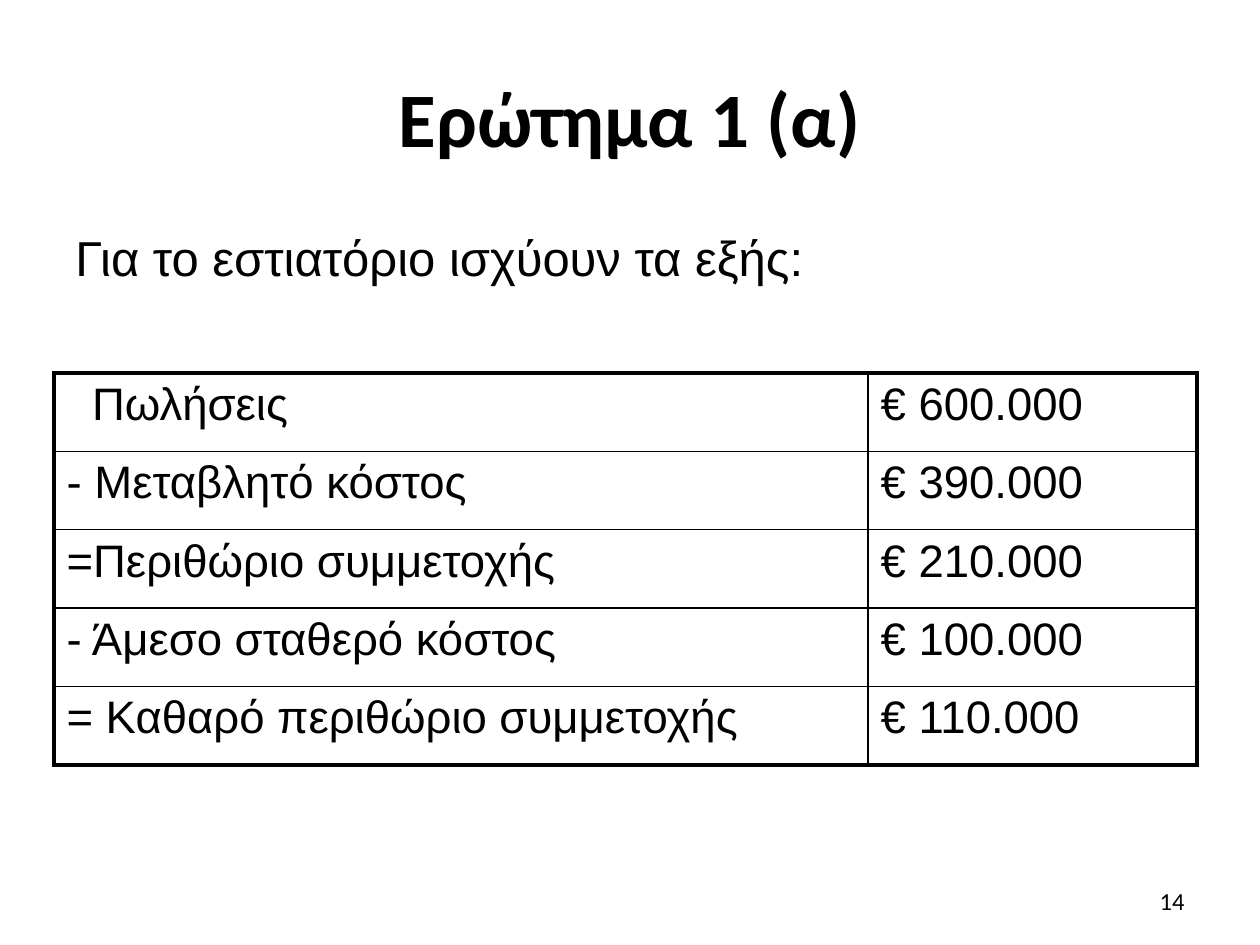
from lxml.etree import SubElement
from pptx import Presentation
from pptx.dml.color import RGBColor
from pptx.enum.text import MSO_ANCHOR, PP_ALIGN
from pptx.oxml.ns import qn
from pptx.util import Emu, Pt

PIXELS_PER_INCH = 126
BLACK = "000000"
THIN, THICK = 1, 2.25
ROWS = [
    ("Πωλήσεις", "€ 600.000"),
    ("- Μεταβλητό κόστος", "€ 390.000"),
    ("=Περιθώριο συμμετοχής", "€ 210.000"),
    ("- Άμεσο σταθερό κόστος", "€ 100.000"),
    ("= Καθαρό περιθώριο συμμετοχής", "€ 110.000"),
]
COLUMN_WIDTHS = (814, 329)
TABLE_HEIGHT = 392
SALES_MARGIN = 38

TITLE = {"name": "Calibri", "size": Pt(44), "bold": True}
BODY = {"name": "Arial", "size": Pt(28)}
CELL = {"name": "Arial", "size": Pt(26)}
NUMBER = {"name": "Calibri", "size": Pt(14)}


def px(length):
    """Turn pixels into EMU."""
    return Emu(round(length * 914400 / PIXELS_PER_INCH))


def color(value):
    """Turn a hex string into a colour."""
    return RGBColor.from_string(value)


def write(text_frame, text, font_values, alignment=PP_ALIGN.LEFT):
    """Write one formatted paragraph into a text frame."""
    paragraph = text_frame.paragraphs[0]
    paragraph.alignment = alignment
    run = paragraph.add_run()
    run.text = text
    for name, value in font_values.items():
        setattr(run.font, name, value)
    run.font.color.rgb = color(BLACK)


def add_text(slide, box, text, font_values, alignment=PP_ALIGN.LEFT, anchor=MSO_ANCHOR.MIDDLE):
    """Add a wrapped text box."""
    text_frame = slide.shapes.add_textbox(*map(px, box)).text_frame
    text_frame.word_wrap = True
    text_frame.vertical_anchor = anchor
    write(text_frame, text, font_values, alignment)


def set_borders(cell, widths):
    """Draw the four cell borders with the given widths in points."""
    properties = cell._tc.get_or_add_tcPr()
    for index, (side, width) in enumerate(widths.items()):
        line = SubElement(properties, qn(f"a:ln{side}"), w=str(Pt(width)))
        fill = SubElement(line, qn("a:solidFill"))
        SubElement(fill, qn("a:srgbClr"), val=BLACK)
        properties.insert(index, line)


def add_margin_table(slide, left, top):
    """Add the contribution margin table with a thick outer frame."""
    last_row, last_column = len(ROWS) - 1, len(COLUMN_WIDTHS) - 1
    table = slide.shapes.add_table(
        len(ROWS), len(COLUMN_WIDTHS), px(left), px(top), px(sum(COLUMN_WIDTHS)), px(TABLE_HEIGHT)
    ).table
    table.first_row = table.horz_banding = False
    for column, width in zip(table.columns, COLUMN_WIDTHS):
        column.width = px(width)
    for row_index, texts in enumerate(ROWS):
        table.rows[row_index].height = px(TABLE_HEIGHT / len(ROWS))
        for column_index, text in enumerate(texts):
            cell = table.cell(row_index, column_index)
            cell.fill.background()
            write(cell.text_frame, text, CELL)
            outer_sides = {
                "L": column_index == 0,
                "R": column_index == last_column,
                "T": row_index == 0,
                "B": row_index == last_row,
            }
            set_borders(cell, {side: THICK if outer else THIN for side, outer in outer_sides.items()})
    table.cell(0, 0).margin_left = px(SALES_MARGIN)


def main():
    """Build and save the slide."""
    presentation = Presentation()
    presentation.slide_width, presentation.slide_height = px(1260), px(945)
    slide = presentation.slides.add_slide(presentation.slide_layouts[6])
    add_text(slide, (63, 38, 1134, 158), "Ερώτημα 1 (α)", TITLE, PP_ALIGN.CENTER)
    add_text(slide, (63, 221, 1133, 142), "Για το εστιατόριο ισχύουν τα εξής:", BODY, anchor=MSO_ANCHOR.TOP)
    add_margin_table(slide, 54, 373)
    add_text(slide, (903, 876, 294, 50), "14", NUMBER, PP_ALIGN.RIGHT)
    presentation.save("out.pptx")


if __name__ == "__main__":
    main()
